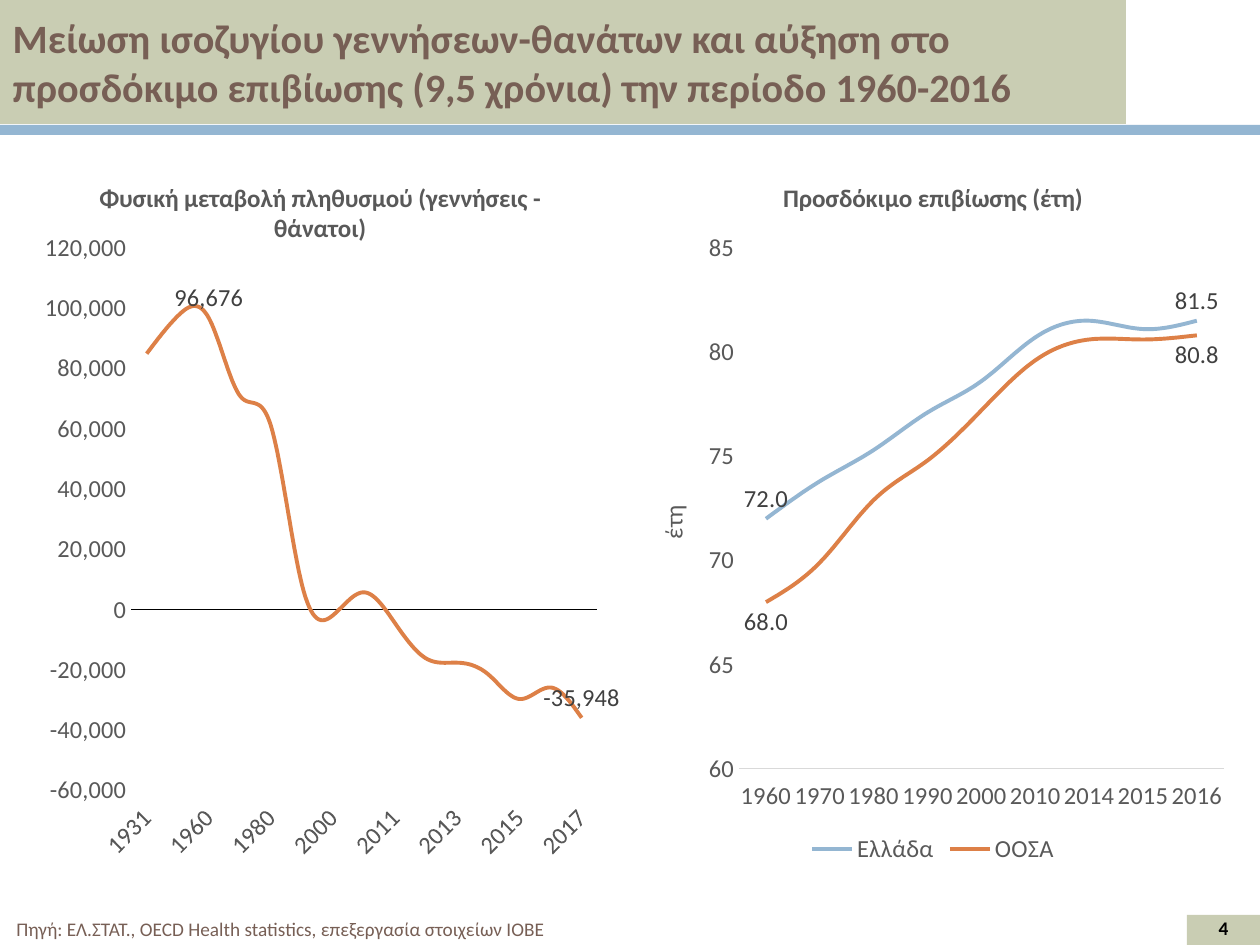
from lxml.etree import fromstring
from pptx import Presentation
from pptx.chart.data import CategoryChartData
from pptx.dml.color import RGBColor
from pptx.enum.chart import (XL_CHART_TYPE, XL_LABEL_POSITION, XL_LEGEND_POSITION,
                             XL_TICK_LABEL_POSITION, XL_TICK_MARK)
from pptx.enum.shapes import MSO_SHAPE
from pptx.enum.text import MSO_ANCHOR, MSO_AUTO_SIZE, PP_ALIGN
from pptx.oxml.ns import nsdecls, qn
from pptx.util import Pt

PX = 914400 / 126
SAGE = RGBColor(0xC9, 0xCD, 0xB3)
BLUE = RGBColor(0x94, 0xB6, 0xD2)
ORANGE = RGBColor(0xDD, 0x80, 0x47)
BROWN = RGBColor(0x77, 0x5F, 0x55)
GRAY = RGBColor(0x59, 0x59, 0x59)
LABEL_GRAY = RGBColor(0x40, 0x40, 0x40)
LIGHT_GRAY = RGBColor(0xD9, 0xD9, 0xD9)
BLACK = RGBColor(0, 0, 0)
ABOVE, BELOW = XL_LABEL_POSITION.ABOVE, XL_LABEL_POSITION.BELOW


def box(*sides):
    """Turn left, top, width, height in px into EMU."""
    return [round(side * PX) for side in sides]


def write(frame, text, size=14, color=GRAY, bold=False, align=None, anchor=None):
    frame.word_wrap = True
    if anchor is not None:
        frame.vertical_anchor = anchor
    paragraph = frame.paragraphs[0]
    paragraph.alignment = align
    run = paragraph.add_run()
    run.text = text
    run.font.name = "Calibri"
    run.font.size = Pt(size)
    run.font.bold = bold
    run.font.color.rgb = color


prs = Presentation()
prs.slide_width, prs.slide_height = box(1260, 945)
slide = prs.slides.add_slide(prs.slide_layouts[5])

# Heading and bands
heading = slide.shapes.title
heading.left, heading.top, heading.width, heading.height = box(0, 0, 1126, 124)
heading.fill.solid()
heading.fill.fore_color.rgb = SAGE
heading.text_frame.auto_size = MSO_AUTO_SIZE.NONE
write(heading.text_frame,
      "Μείωση ισοζυγίου γεννήσεων-θανάτων και αύξηση στο προσδόκιμο επιβίωσης "
      "(9,5 χρόνια) την περίοδο 1960-2016",
      size=23, color=BROWN, bold=True, align=PP_ALIGN.LEFT, anchor=MSO_ANCHOR.MIDDLE)

for place, color in (((0, 125, 1260, 10), BLUE), ((1187, 915, 73, 30), SAGE)):
    band = slide.shapes.add_shape(MSO_SHAPE.RECTANGLE, *box(*place))
    band.shadow.inherit = False
    band.fill.solid()
    band.fill.fore_color.rgb = color
    band.line.fill.background()

# Charts: each series is name, color, values, {labelled point: position}
charts = [
    dict(title="Προσδόκιμο επιβίωσης (έτη)", place=(630, 155, 606, 714),
         plot=(0.18, 0.13, 0.8, 0.73), value_title="έτη", legend=True,
         years=[1960, 1970, 1980, 1990, 2000, 2010, 2014, 2015, 2016],
         label_format="0.0", axis_format="0", scale=(60, 85, 5),
         base_line=(LIGHT_GRAY, 0.75), skip=1, rotation=0,
         series=[
             ("Ελλάδα", BLUE, [72, 73.8, 75.3, 77.1, 78.6, 80.7, 81.5, 81.1, 81.5],
              {0: ABOVE, 8: ABOVE}),
             ("ΟΟΣΑ", ORANGE, [68, 69.9, 72.9, 74.8, 77.2, 79.6, 80.6, 80.6, 80.8],
              {0: BELOW, 8: BELOW})]),
    dict(title="Φυσική μεταβολή πληθυσμού (γεννήσεις - θάνατοι)",
         place=(25, 155, 595, 714),
         plot=(0.18, 0.13, 0.79, 0.76), value_title=None, legend=False,
         years=[1931, 1950, 1960, 1970, 1980, 1990, 2000, *range(2010, 2018)],
         label_format="#,##0", axis_format="#,##0", scale=(-60000, 120000, 20000),
         base_line=(BLACK, 1), skip=2, rotation=-45,
         series=[
             ("Series 1", ORANGE,
              [84874, 97379, 96676, 70919, 60852, 8077, -1896, 5682, -4671, -16297,
               -17660, -21592, -29715, -25894, -35948],
              {2: ABOVE, 14: ABOVE})]),
]

for content in charts:
    data = CategoryChartData(number_format=content["label_format"])
    data.categories = [str(year) for year in content["years"]]
    for name, _, values, _ in content["series"]:
        data.add_series(name, values)
    chart = slide.shapes.add_chart(XL_CHART_TYPE.LINE, *box(*content["place"]), data).chart
    chart.font.name = "Calibri"
    chart.font.size = Pt(14)
    chart.font.color.rgb = GRAY

    chart.has_title = True
    write(chart.chart_title.text_frame, content["title"], size=14.4, bold=True)
    chart.chart_title.include_in_layout = False
    chart.has_legend = content["legend"]
    if chart.has_legend:
        chart.legend.position = XL_LEGEND_POSITION.BOTTOM
        chart.legend.include_in_layout = False

    plot = chart.plots[0]
    plot.vary_by_categories = False
    for series, (_, color, _, labels) in zip(plot.series, content["series"]):
        series.smooth = True
        series.format.line.color.rgb = color
        series.format.line.width = Pt(2.25)
        series.data_labels.show_value = False
        for index, position in labels.items():
            label = series.points[index].data_label
            label.font.name = "Calibri"
            label.font.size = Pt(14)
            label.font.color.rgb = LABEL_GRAY
            label.position = position

    values_axis, years_axis = chart.value_axis, chart.category_axis
    for axis in (values_axis, years_axis):
        axis.major_tick_mark = axis.minor_tick_mark = XL_TICK_MARK.NONE
        axis.has_major_gridlines = False
        axis.tick_labels.font.name = "Calibri"
        axis.tick_labels.font.size = Pt(14)
        axis.tick_labels.font.color.rgb = GRAY
    values_axis.minimum_scale, values_axis.maximum_scale, values_axis.major_unit = content["scale"]
    values_axis.tick_labels.number_format = content["axis_format"]
    values_axis.tick_labels.number_format_is_linked = False
    values_axis.format.line.fill.background()
    if content["value_title"]:
        write(values_axis.axis_title.text_frame, content["value_title"])
        values_axis.axis_title.text_frame._txBody.bodyPr.set("rot", "-5400000")

    line_color, line_width = content["base_line"]
    years_axis.format.line.color.rgb = line_color
    years_axis.format.line.width = Pt(line_width)
    years_axis.tick_label_position = XL_TICK_LABEL_POSITION.LOW
    axis_xml = years_axis._element
    axis_xml.find(qn("c:txPr")).find(qn("a:bodyPr")).set("rot", str(content["rotation"] * 60000))
    axis_xml.find(qn("c:noMultiLvlLbl")).addprevious(
        fromstring(f'<c:tickLblSkip {nsdecls("c")} val="{content["skip"]}"/>'))

    # Fixed inner plot area, as fractions of the chart
    sides = "".join(f'<c:{side} val="{part}"/>' for side, part in zip("xywh", content["plot"]))
    plot_area = chart._chartSpace.chart.plotArea
    for layout in plot_area.findall(qn("c:layout")):
        plot_area.remove(layout)
    plot_area.insert(0, fromstring(
        f'<c:layout {nsdecls("c")}><c:manualLayout><c:layoutTarget val="inner"/>'
        f'<c:xMode val="edge"/><c:yMode val="edge"/>{sides}</c:manualLayout></c:layout>'))

# Footer
source_note = slide.shapes.add_textbox(*box(4, 911, 557, 36))
write(source_note.text_frame,
      "Πηγή: ΕΛ.ΣΤΑΤ., OECD Health statistics, επεξεργασία στοιχείων ΙΟΒΕ",
      size=11, color=BROWN, align=PP_ALIGN.JUSTIFY)
page_number = slide.shapes.add_textbox(*box(1187, 911, 73, 34))
write(page_number.text_frame, "4", size=11, color=BLACK, bold=True,
      align=PP_ALIGN.CENTER, anchor=MSO_ANCHOR.MIDDLE)

prs.save("out.pptx")
